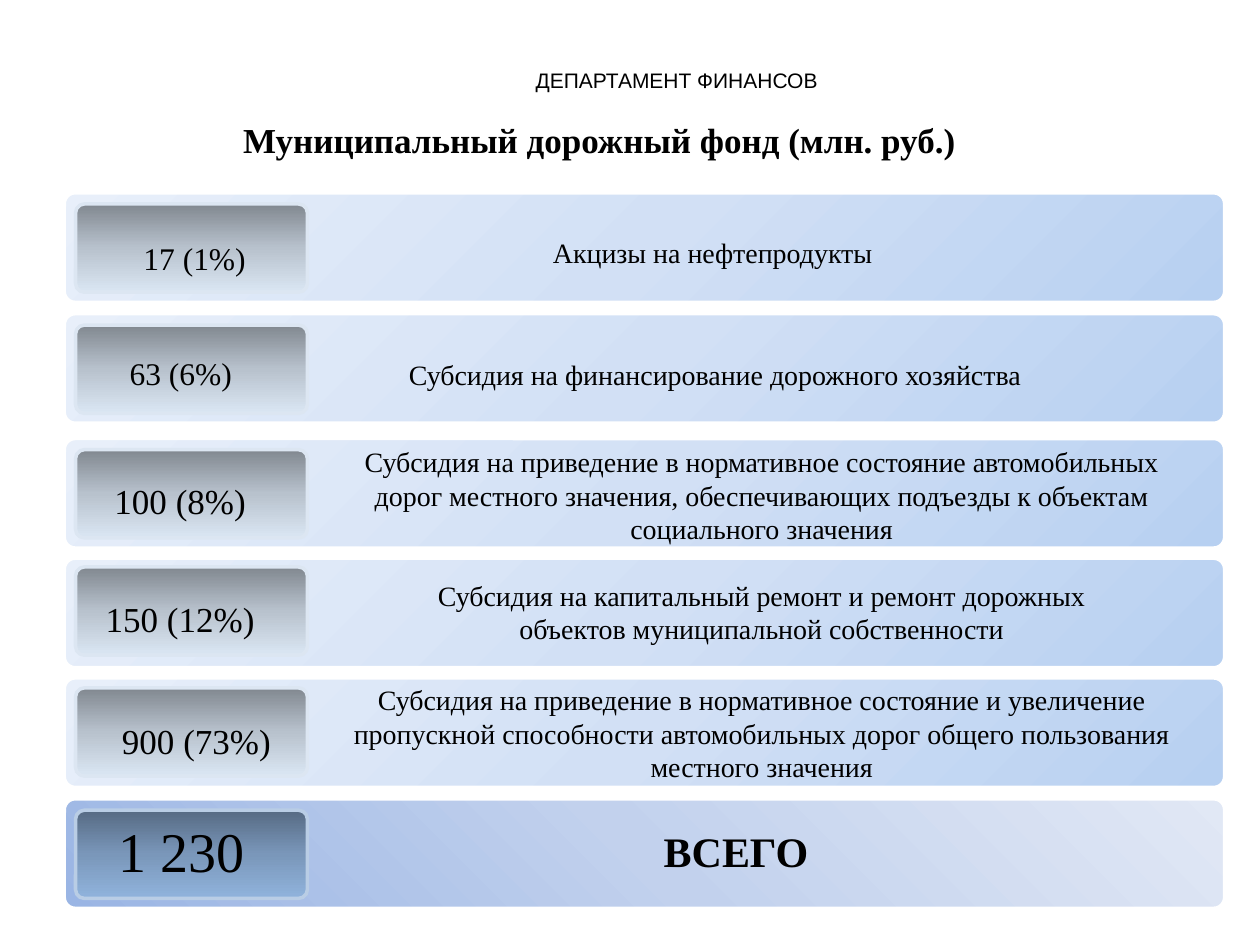
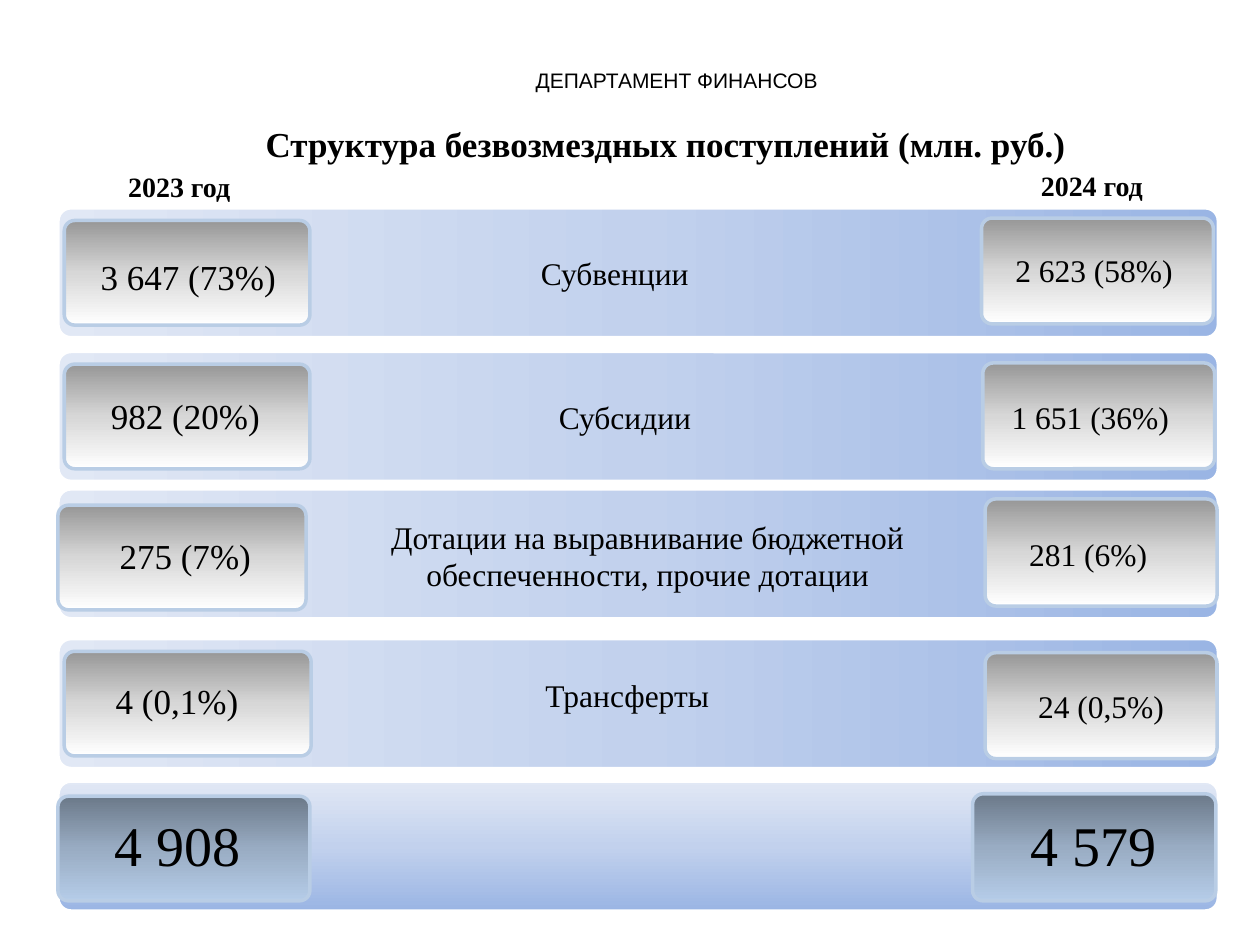
from dataclasses import dataclass
from typing import Optional

from pptx import Presentation
from pptx.dml.color import RGBColor
from pptx.enum.shapes import MSO_SHAPE
from pptx.enum.text import MSO_AUTO_SIZE, PP_ALIGN
from pptx.oxml import parse_xml
from pptx.oxml.ns import nsdecls
from pptx.slide import Slide
from pptx.util import Pt

COLORS = {
    "text": "000000",
    "band_line": "FFFFFF",
    "pale_line": "DCE6F2",
    "chip_line": "B9CDE5",
    "sky_deep": "B7D0F1", "sky_mid": "D2E0F5", "sky_light": "E8EFFA",
    "blue_deep": "9AB5E4", "blue_mid": "C2D1ED", "blue_light": "E1E8F5",
    "slate_deep": "818890", "slate_mid": "B8C2CD", "slate_light": "DAE6F3",
    "grey_deep": "979797", "grey_mid": "D7D7D7", "grey_light": "FFFFFF",
    "navy_deep": "566A83", "navy_mid": "7A97BA", "navy_light": "90B3DC",
    "steel_deep": "6B7989", "steel_mid": "99ACC3", "steel_light": "B5CCE8",
}
SERIF = "Times New Roman"
BAND_WIDTH = 663.1


@dataclass(frozen=True)
class Style:
    tone: str
    line: str
    angle: Optional[int] = 90


@dataclass(frozen=True)
class Box:
    left: float
    top: float
    width: float
    height: float
    style: Style


@dataclass(frozen=True)
class Label:
    text: str
    left: float
    top: float
    width: float
    size: int
    bold: bool = False
    align: PP_ALIGN = PP_ALIGN.LEFT
    font: str = SERIF
    wrap: bool = False


SKY_BAND = Style("sky", "band_line", None)
FUND_TOTAL_BAND = Style("blue", "band_line", 315)
BLUE_BAND = Style("blue", "band_line", 180)
GRANT_TOTAL_BAND = Style("blue", "band_line", 270)
SLATE_CHIP = Style("slate", "pale_line")
NAVY_CHIP = Style("navy", "chip_line")
GREY_CHIP = Style("grey", "chip_line")
STEEL_CHIP = Style("steel", "chip_line")

HEADER = Label("ДЕПАРТАМЕНТ ФИНАНСОВ", 63.4, 35.3, 646.6, 12,
               align=PP_ALIGN.CENTER, font="Arial", wrap=True)

FUND_ROWS = [(110.2, 116.6), (179.3, 185.8), (250.6, 257),
             (319, 324), (387.4, 393.1)]
FUND_LABELS = [
    Label("17 (1%)", 74.9, 133.2, 73.4, 18),
    Label("63 (6%)", 67, 198.7, 73.4, 18),
    Label("100 (8%)", 58.3, 270.7, 90, 20),
    Label("150 (12%)", 53.3, 337.7, 100.1, 20),
    Label("900 (73%)", 62.6, 407.5, 100.1, 20),
    Label("1 230", 60.5, 463, 87.1, 32),
    Label("ВСЕГО", 372.2, 468, 97.9, 24, bold=True),
    Label("Акцизы на нефтепродукты", 308.9, 131, 199.4, 16),
    Label("Субсидия на финансирование дорожного хозяйства",
          223.9, 200.9, 369.4, 16, align=PP_ALIGN.CENTER),
    Label("Субсидия на приведение в нормативное состояние автомобильных\n"
          "дорог местного значения, обеспечивающих подъезды к объектам\n"
          "социального значения",
          198, 250.6, 474.5, 16, align=PP_ALIGN.CENTER),
    Label("Субсидия на капитальный ремонт и ремонт дорожных\n"
          "объектов муниципальной собственности",
          240.5, 326.9, 389.5, 16, align=PP_ALIGN.CENTER),
    Label("Субсидия на приведение в нормативное состояние и увеличение\n"
          "пропускной способности автомобильных дорог общего пользования\n"
          "местного значения",
          189.4, 386.6, 491.8, 16, align=PP_ALIGN.CENTER),
]

GRANT_BAND_TOPS = [118.8, 200.9, 279.4, 365]
GRANT_CHIPS = [
    Box(36.7, 126, 140.4, 59.8, GREY_CHIP),
    Box(36.7, 208.1, 140.4, 59.8, GREY_CHIP),
    Box(33.1, 288.7, 141.8, 59.8, GREY_CHIP),
    Box(36.7, 372.2, 141.1, 59.8, GREY_CHIP),
    Box(33.1, 455, 144, 59.8, STEEL_CHIP),
    Box(560.9, 124.6, 132.5, 60.5, GREY_CHIP),
    Box(561.6, 207.4, 132.5, 60.5, GREY_CHIP),
    Box(563, 285.1, 132.5, 61.2, GREY_CHIP),
    Box(563, 373, 132.5, 60.5, GREY_CHIP),
    Box(555.8, 453.6, 139, 61.2, STEEL_CHIP),
]
GRANT_LABELS = [
    Label("2023 год", 66.2, 93.6, 73.8, 16, bold=True),
    Label("2024 год", 587.7, 92.9, 73.8, 16, bold=True),
    Label("3 647 (73%)", 50.4, 142.6, 115.2, 20),
    Label("982 (20%)", 56.2, 221.8, 100.1, 20),
    Label("275 (7%)", 61.2, 301.7, 90, 20),
    Label("4 (0,1%)", 59, 384.5, 85, 20),
    Label("4 908", 58.3, 459.4, 87.1, 32),
    Label("Субвенции", 302, 141.4, 99, 18),
    Label("Субсидии", 312.3, 223.9, 90, 18),
    Label("Дотации на выравнивание бюджетной\nобеспеченности, прочие дотации",
          212.4, 292.3, 315.4, 18, align=PP_ALIGN.CENTER),
    Label("Трансферты", 304.6, 383, 108.7, 18),
    Label("2 623 (58%)", 573.1, 139.7, 105.1, 18),
    Label("1 651 (36%)", 571, 223.9, 105.1, 18),
    Label("281 (6%)", 581, 302.4, 82.8, 18),
    Label("24 (0,5%)", 586.1, 388.8, 87.1, 18),
    Label("4 579", 581.8, 459.4, 87.1, 32),
]


def rgb(name: str) -> RGBColor:
    return RGBColor.from_string(COLORS[name])


def gradient_xml(style: Style) -> str:
    stops = "".join(
        f'<a:gs pos="{pos}"><a:srgbClr val="{COLORS[f"{style.tone}_{shade}"]}"/></a:gs>'
        for pos, shade in ((0, "deep"), (50000, "mid"), (100000, "light")))
    if style.angle is None:
        course = ('<a:path path="circle">'
                  '<a:fillToRect l="100000" t="100000"/></a:path>')
    else:
        course = f'<a:lin ang="{style.angle * 60000}" scaled="0"/>'
    return (f'<a:gradFill {nsdecls("a")} rotWithShape="1">'
            f'<a:gsLst>{stops}</a:gsLst>{course}</a:gradFill>')


def draw_box(s: Slide, box: Box) -> None:
    sp = s.shapes.add_shape(MSO_SHAPE.ROUNDED_RECTANGLE, Pt(box.left), Pt(box.top),
                            Pt(box.width), Pt(box.height))
    sp.adjustments[0] = 0.1
    sp.shadow.inherit = False
    sp.line.color.rgb = rgb(box.style.line)
    sp.line.width = Pt(2)
    geometry = sp._element.spPr.find(".//{*}prstGeom")
    geometry.addnext(parse_xml(gradient_xml(box.style)))


def draw_label(s: Slide, label: Label) -> None:
    lines = label.text.split("\n")
    height = 1.2 * label.size * len(lines) + 7.2
    tf = s.shapes.add_textbox(Pt(label.left), Pt(label.top),
                              Pt(label.width), Pt(height)).text_frame
    tf.word_wrap = label.wrap
    tf.auto_size = MSO_AUTO_SIZE.SHAPE_TO_FIT_TEXT
    tf.text = label.text
    for p in tf.paragraphs:
        p.alignment = label.align
        p.font.name = label.font
        p.font.size = Pt(label.size)
        p.font.bold = label.bold
        p.font.color.rgb = rgb("text")


def add_slide(prs: Presentation, title: Label, boxes: list[Box],
              labels: list[Label]) -> None:
    s = prs.slides.add_slide(prs.slide_layouts[6])
    for box in boxes:
        draw_box(s, box)
    for label in [HEADER, title, *labels]:
        draw_label(s, label)


def fund_row(band_top: float, chip_top: float, band: Style, chip: Style) -> list[Box]:
    return [Box(36.7, band_top, BAND_WIDTH, 62.6, band),
            Box(43.2, chip_top, 132.5, 50.4, chip)]


def grant_band(top: float, style: Style) -> Box:
    return Box(33.1, top, BAND_WIDTH, 74.2, style)


def main() -> None:
    prs = Presentation()
    prs.slide_width, prs.slide_height = Pt(720), Pt(540)

    fund_boxes = [box for band_top, chip_top in FUND_ROWS
                  for box in fund_row(band_top, chip_top, SKY_BAND, SLATE_CHIP)]
    fund_boxes += fund_row(456.5, 463, FUND_TOTAL_BAND, NAVY_CHIP)
    fund_title = Label("Муниципальный дорожный фонд (млн. руб.)",
                       131.8, 64.1, 514.8, 20, bold=True, wrap=True)
    add_slide(prs, fund_title, fund_boxes, FUND_LABELS)

    grant_bands = [grant_band(top, BLUE_BAND) for top in GRANT_BAND_TOPS]
    grant_bands.append(grant_band(446.4, GRANT_TOTAL_BAND))
    grant_title = Label("Структура безвозмездных поступлений (млн. руб.)",
                        144.7, 66.2, 561.6, 20, bold=True, wrap=True)
    add_slide(prs, grant_title, grant_bands + GRANT_CHIPS, GRANT_LABELS)

    prs.save("out.pptx")


if __name__ == "__main__":
    main()
